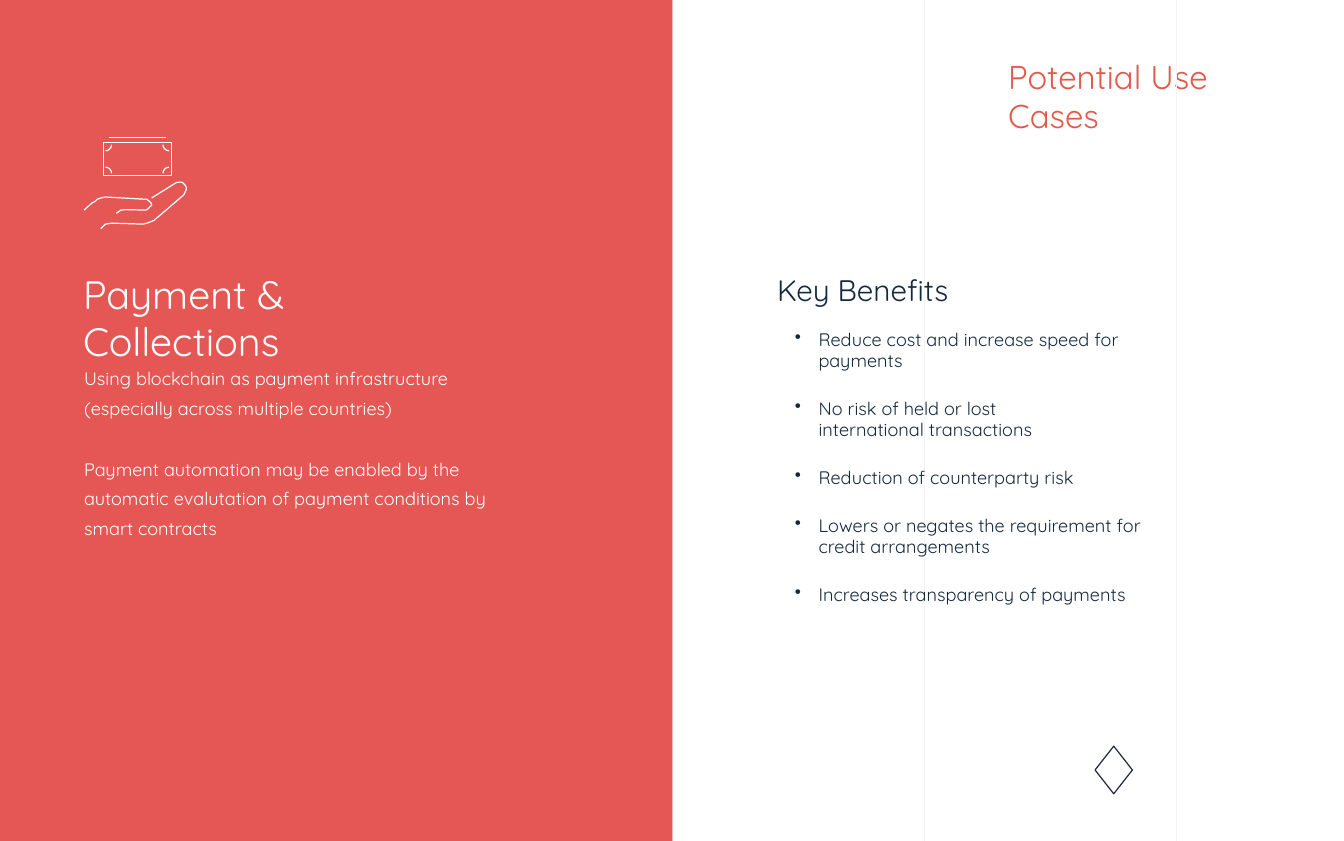
from dataclasses import dataclass

from lxml import etree
from pptx import Presentation
from pptx.dml.color import RGBColor
from pptx.enum import shapes, text
from pptx.oxml import ns
from pptx.util import Cm, Pt


@dataclass(frozen=True)
class Theme:
    font: str = "Quicksand"
    panel: str = "E34E4B"
    title: str = "E3594B"
    dark: str = "15293D"
    mark: str = "212B3D"
    white: str = "FFFFFF"
    guide: str = "F3F4F4"
    title_size: float = 20
    topic_size: float = 24
    heading_size: float = 18
    body_size: float = 11
    hairline: float = 0.5
    icon_line: float = 0.75


THEME = Theme()

TITLE = "Potential Use Cases"
TOPIC = "Payment & Collections"
DESCRIPTION = [
    "Using blockchain as payment infrastructure (especially across multiple countries)",
    "Payment automation may be enabled by the automatic evalutation of payment "
    "conditions by smart contracts",
]
BENEFITS_HEADING = "Key Benefits"
BENEFITS = [
    "Reduce cost and increase speed for payments",
    "No risk of held or lost\vinternational transactions",
    "Reduction of counterparty risk",
    "Lowers or negates the requirement for credit arrangements",
    "Increases transparency of payments",
]

SLIDE_SIZE = (28.78, 18.01)
PANEL_WIDTH, COLUMN_WIDTH = 14.4, 5.4
TITLE_BOX = (21.59, 1.14, 5.79, 1.9)
TOPIC_BOX = (1.78, 5.72, 8.23, 2)
DESCRIPTION_BOX = (1.8, 7.65, 8.97, 4)
BENEFITS_BOX = (16.64, 5.77, 8.36, 7.5)
MARK_BOX = (23.45, 15.98, 0.8, 1.02)

UNIT = Cm(0.01)
NOTE = (221, 305, 146, 71)
NOTE_STACK = (234, 295, 356, 295)
NOTE_CORNER = [(5, 18), (10, 17), (14, 14), (17, 10), (18, 5)]
HAND = [
    [(216, 490), (226, 480), (239, 478), (307, 480), (315, 478), (330, 472),
     (394, 417), (399, 406), (399, 401), (396, 396), (391, 391), (386, 390),
     (378, 391), (373, 394), (325, 424)],
    [(249, 457), (259, 450), (269, 449), (312, 450), (315, 449), (325, 439),
     (323, 434), (315, 427), (226, 422), (216, 424), (208, 427), (203, 432),
     (198, 434), (180, 450)],
]


def set_values(target, values):
    for name, value in values.items():
        setattr(target, name, value)


def color(value):
    return RGBColor.from_string(value)


def cm(values):
    return [Cm(value) for value in values]


def style_line(shape, line_color, width):
    shape.line.color.rgb = color(line_color)
    shape.line.width = Pt(width)


def style_shape(shape, fill=None, line=None, width=0):
    shape.shadow.inherit = False
    if fill:
        shape.fill.solid()
        shape.fill.fore_color.rgb = color(fill)
    else:
        shape.fill.background()
    if line:
        style_line(shape, line, width)
    else:
        shape.line.fill.background()


def add_line(slide, ends, line_color, width):
    line = slide.shapes.add_connector(shapes.MSO_CONNECTOR.STRAIGHT, *ends)
    style_line(line, line_color, width)
    etree.SubElement(line._element.spPr, ns.qn("a:effectLst"))


def add_outline(slide, points):
    builder = slide.shapes.build_freeform(*points[0], scale=UNIT)
    builder.add_line_segments(points[1:], close=False)
    style_shape(builder.convert_to_shape(), line=THEME.white, width=THEME.icon_line)


def style_frame(frame):
    set_values(frame, {
        "word_wrap": True,
        "auto_size": text.MSO_AUTO_SIZE.NONE,
        "vertical_anchor": text.MSO_ANCHOR.TOP,
        "margin_left": 0, "margin_right": 0,
        "margin_top": Cm(0.06), "margin_bottom": 0,
    })


def add_bullet(paragraph):
    properties = paragraph._p.get_or_add_pPr()
    properties.set("marL", str(Cm(0.89)))
    properties.set("indent", str(Cm(-0.51)))
    etree.SubElement(properties, ns.qn("a:buChar")).set("char", "•")


def write(frame, items):
    for index, (content, size, font_color, spacing, bulleted) in enumerate(items):
        paragraph = frame.paragraphs[0] if index == 0 else frame.add_paragraph()
        paragraph.text = content
        if bulleted:
            add_bullet(paragraph)
        set_values(paragraph, {"alignment": text.PP_ALIGN.LEFT, **spacing})
        set_values(paragraph.font, {"name": THEME.font, "size": Pt(size)})
        paragraph.font.color.rgb = color(font_color)


def add_text(slide, box, items):
    frame = slide.shapes.add_textbox(*cm(box)).text_frame
    style_frame(frame)
    write(frame, items)


def add_background(slide):
    height = Cm(SLIDE_SIZE[1])
    for column in range(3):
        x = Cm(PANEL_WIDTH + column * COLUMN_WIDTH)
        add_line(slide, (x, 0, x, height), THEME.guide, THEME.hairline)
    panel = slide.shapes.add_shape(
        shapes.MSO_SHAPE.RECTANGLE, 0, 0, Cm(PANEL_WIDTH), height)
    style_shape(panel, fill=THEME.panel)
    panel_color = panel._element.spPr.find(".//" + ns.qn("a:srgbClr"))
    etree.SubElement(panel_color, ns.qn("a:alpha")).set("val", "95000")
    mark = slide.shapes.add_shape(shapes.MSO_SHAPE.DIAMOND, *cm(MARK_BOX))
    style_shape(mark, line=THEME.mark, width=THEME.icon_line)


def add_payment_icon(slide):
    left, top, width, height = NOTE
    note = slide.shapes.add_shape(
        shapes.MSO_SHAPE.RECTANGLE, *[value * UNIT for value in NOTE])
    style_shape(note, line=THEME.white, width=THEME.icon_line)
    for x, x_sign in ((left, 1), (left + width, -1)):
        for y, y_sign in ((top, 1), (top + height, -1)):
            add_outline(slide, [(x + x_sign * dx, y + y_sign * dy)
                                for dx, dy in NOTE_CORNER])
    add_line(slide, [value * UNIT for value in NOTE_STACK],
             THEME.white, THEME.icon_line)
    for points in HAND:
        add_outline(slide, points)


def add_title(slide):
    title = slide.shapes.title
    set_values(title, dict(zip(("left", "top", "width", "height"), cm(TITLE_BOX))))
    style_frame(title.text_frame)
    write(title.text_frame, [(TITLE, THEME.title_size, THEME.title, {}, False)])


def add_copy(slide):
    add_text(slide, TOPIC_BOX, [(TOPIC, THEME.topic_size, THEME.white, {}, False)])
    add_text(slide, DESCRIPTION_BOX, [
        (content, THEME.body_size, THEME.white,
         {"line_spacing": 1.36, "space_before": Pt(19 if index else 0)}, False)
        for index, content in enumerate(DESCRIPTION)])
    heading = (BENEFITS_HEADING, THEME.heading_size, THEME.dark, {}, False)
    add_text(slide, BENEFITS_BOX, [heading] + [
        (content, THEME.body_size, THEME.dark,
         {"line_spacing": Pt(12.8), "space_before": Pt(16.2 if index else 13.1)}, True)
        for index, content in enumerate(BENEFITS)])


def main():
    presentation = Presentation()
    presentation.slide_width, presentation.slide_height = cm(SLIDE_SIZE)
    slide = presentation.slides.add_slide(presentation.slide_layouts[5])
    add_background(slide)
    add_payment_icon(slide)
    add_title(slide)
    add_copy(slide)
    presentation.save("out.pptx")


if __name__ == "__main__":
    main()
